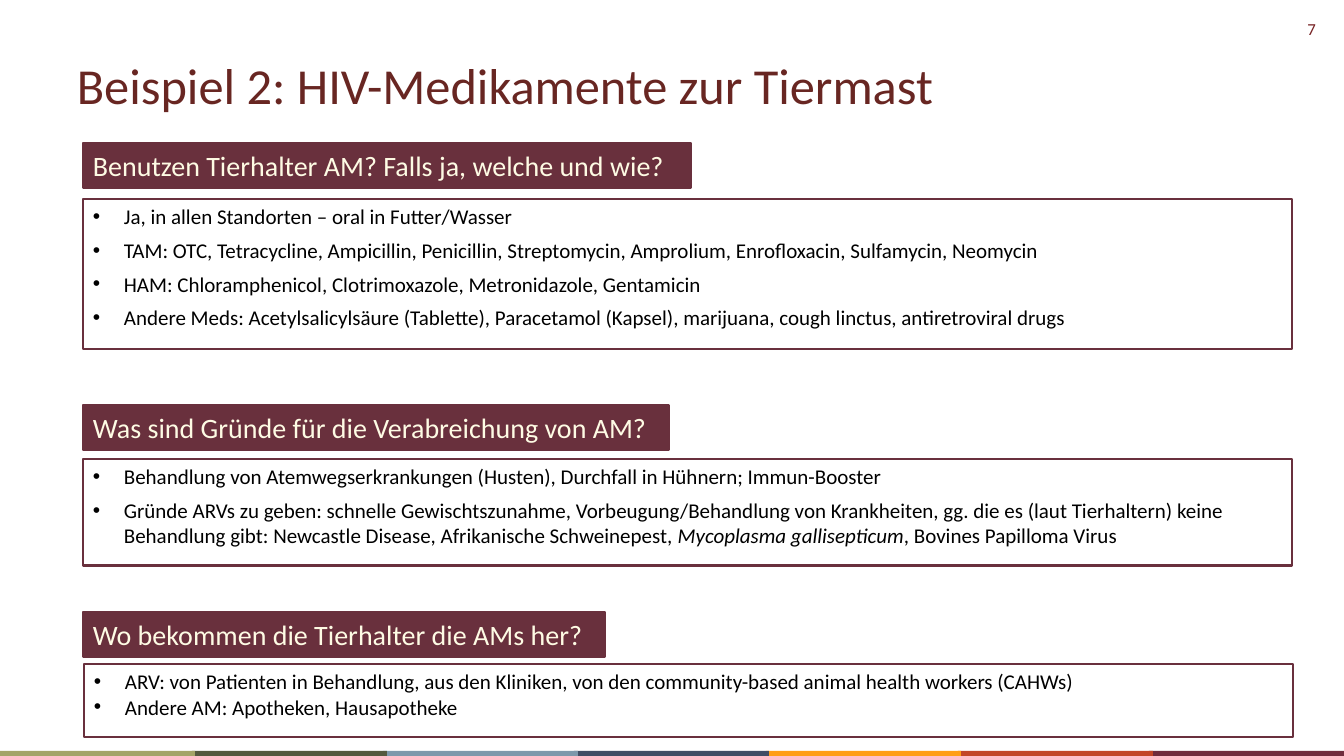
"""Builds a slide on antimicrobial use by livestock keepers."""
from lxml import etree
from pptx import Presentation
from pptx.dml.color import RGBColor
from pptx.enum.shapes import MSO_SHAPE
from pptx.enum.text import MSO_ANCHOR, PP_ALIGN
from pptx.oxml.ns import qn
from pptx.util import Inches, Pt

RECT = MSO_SHAPE.RECTANGLE
TOP, MIDDLE = MSO_ANCHOR.TOP, MSO_ANCHOR.MIDDLE
LEFT, RIGHT = PP_ALIGN.LEFT, PP_ALIGN.RIGHT
PX = Inches(1) / 100.8
INDENT = round(31 * PX)
HUES = {
    "wine": "69303D", "cream": "FEFBE4", "white": "FFFFFF",
    "black": "000000", "title": "682622", "page": "762123",
}
STRIPS = ["A3A467", "53593E", "7C98AB", "404E65", "FF9E16", "C34628", "712C3D"]
FORMATS = {
    "page": {"size": Pt(12), "hue": "page", "anchor": TOP, "align": RIGHT},
    "title": {"size": Pt(36), "hue": "title", "anchor": MIDDLE, "align": LEFT},
    "head": {"size": Pt(20), "hue": "cream", "anchor": MIDDLE, "align": LEFT},
    "list": {"size": Pt(15), "hue": "black", "anchor": TOP, "align": LEFT},
}
SECTIONS = [
    {
        "head": ("Benutzen Tierhalter AM? Falls ja, welche und wie?", 83, 143, 608, 45),
        "box": (83, 199, 1209, 150), "gap": 6,
        "items": [
            ["Ja, in allen Standorten – oral in Futter/Wasser"],
            ["TAM: OTC, Tetracycline, Ampicillin, Penicillin, Streptomycin, "
             "Amprolium, Enrofloxacin, Sulfamycin, Neomycin"],
            ["HAM: Chloramphenicol, Clotrimoxazole, Metronidazole, Gentamicin"],
            ["Andere Meds: Acetylsalicylsäure (Tablette), Paracetamol (Kapsel), "
             "marijuana, cough linctus, antiretroviral drugs"],
        ],
    },
    {
        "head": ("Was sind Gründe für die Verabreichung von AM?", 83, 405, 586, 45),
        "box": (83, 459, 1209, 107), "gap": 6,
        "items": [
            ["Behandlung von Atemwegserkrankungen (Husten), Durchfall in "
             "Hühnern; Immun-Booster"],
            ["Gründe ARVs zu geben: schnelle Gewischtszunahme, "
             "Vorbeugung/Behandlung von Krankheiten, gg. die es (laut "
             "Tierhaltern) keine Behandlung gibt: Newcastle Disease, "
             "Afrikanische Schweinepest, ",
             "Mycoplasma gallisepticum", ", Bovines Papilloma Virus"],
        ],
    },
    {
        "head": ("Wo bekommen die Tierhalter die AMs her?", 83, 612, 522, 45),
        "box": (84, 664, 1209, 73), "gap": 0,
        "items": [
            ["ARV: von Patienten in Behandlung, aus den Kliniken, von den "
             "community-based animal health workers (CAHWs)"],
            ["Andere AM: Apotheken, Hausapotheke"],
        ],
    },
]

deck = Presentation()
deck.slide_width, deck.slide_height = round(1344 * PX), round(756 * PX)
slide = deck.slides.add_slide(deck.slide_layouts[6])


def add_rect(spot, fill=None, line=None):
    shape = slide.shapes.add_shape(RECT, *[round(n * PX) for n in spot])
    shape.shadow.inherit = False
    for part, hue in ((shape.fill, fill), (shape.line.fill, line)):
        if hue:
            part.solid()
            part.fore_color.rgb = RGBColor.from_string(hue)
        else:
            part.background()
    if line:
        shape.line.width = Pt(2)
    return shape


def add_text(shape, kind, items, gap=0):
    look = FORMATS[kind]
    frame = shape.text_frame
    frame.word_wrap = True
    frame.vertical_anchor = look["anchor"]
    for i, runs in enumerate(items):
        para = frame.paragraphs[0] if i == 0 else frame.add_paragraph()
        para.alignment = look["align"]
        para.space_after = Pt(gap)
        if kind == "list":
            props = para._p.get_or_add_pPr()
            props.set("marL", str(INDENT))
            props.set("indent", str(-INDENT))
            etree.SubElement(props, qn("a:buFont")).set("typeface", "Arial")
            etree.SubElement(props, qn("a:buChar")).set("char", "•")
        for j, words in enumerate(runs):
            run = para.add_run()
            run.text = words
            form = {"name": "Calibri", "size": look["size"], "italic": j == 1}
            for key, value in form.items():
                setattr(run.font, key, value)
            run.font.color.rgb = RGBColor.from_string(HUES[look["hue"]])


for i, hue in reversed(list(enumerate(STRIPS))):
    add_rect((round(i * 191.5), 751, 195, 5), hue)

add_text(add_rect((1256, 14, 70, 30)), "page", [["7"]])
add_text(add_rect((67, 47, 1210, 75)), "title",
         [["Beispiel 2: HIV-Medikamente zur Tiermast"]])

for part in SECTIONS:
    label, *spot = part["head"]
    add_text(add_rect(spot, HUES["wine"], HUES["wine"]), "head", [[label]])
    box = add_rect(part["box"], HUES["white"], HUES["wine"])
    add_text(box, "list", part["items"], part["gap"])

deck.save("out.pptx")
